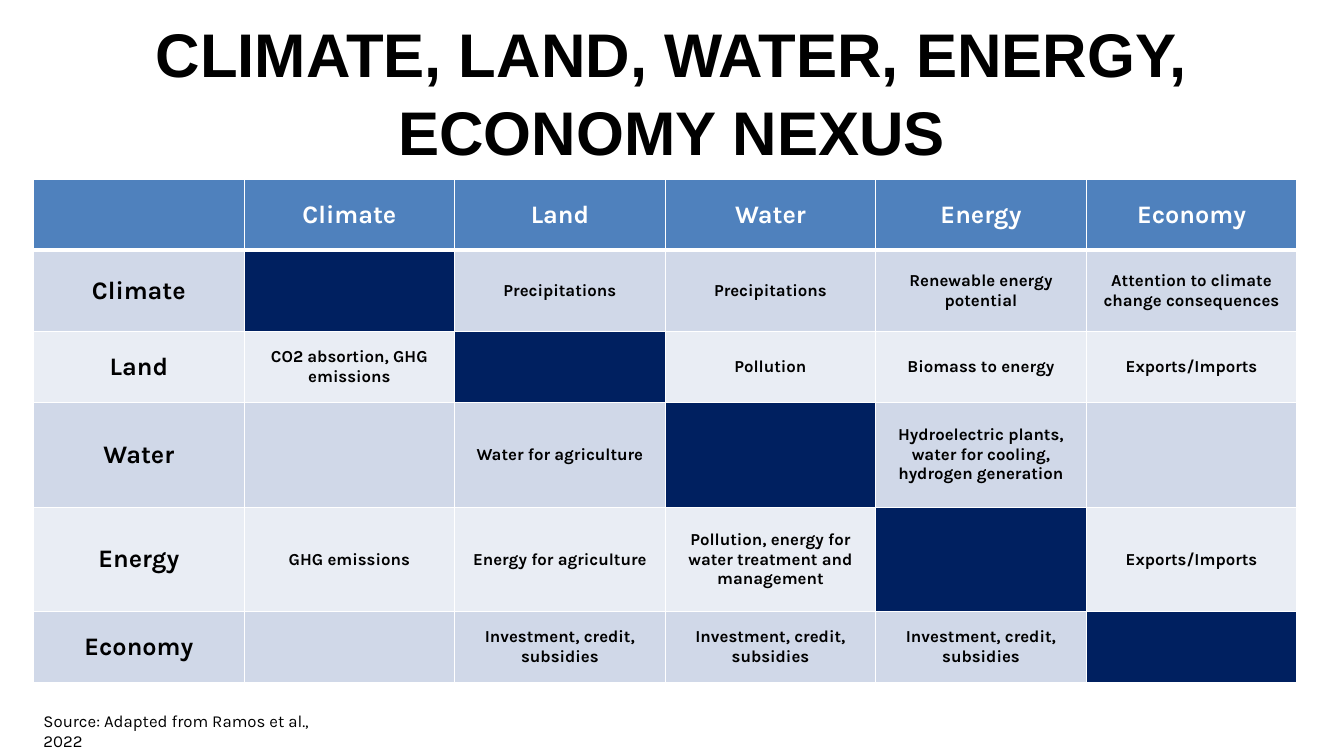
from lxml.etree import SubElement
from pptx import Presentation
from pptx.dml.color import RGBColor
from pptx.enum.text import MSO_ANCHOR, PP_ALIGN
from pptx.oxml.ns import qn
from pptx.util import Inches, Pt

WIDE, HIGH = Inches(13.33), Inches(7.5)
BLACK = RGBColor(0x00, 0x00, 0x00)
WHITE = RGBColor(0xFF, 0xFF, 0xFF)
BLUE = RGBColor(0x4F, 0x81, 0xBD)
NAVY = RGBColor(0x00, 0x20, 0x60)
BANDS = RGBColor(0xE9, 0xED, 0xF4), RGBColor(0xD0, 0xD8, 0xE8)

TOPICS = ["Climate", "Land", "Water", "Energy", "Economy"]
CREDIT = "Investment, credit, subsidies"
LINKS = [
    ["", "Precipitations", "Precipitations", "Renewable energy potential",
     "Attention to climate change consequences"],
    ["CO2 absortion, GHG emissions", "", "Pollution", "Biomass to energy",
     "Exports/Imports"],
    ["", "Water for agriculture", "",
     "Hydroelectric plants, water for cooling, hydrogen generation", ""],
    ["GHG emissions", "Energy for agriculture",
     "Pollution, energy for water treatment and management", "",
     "Exports/Imports"],
    ["", CREDIT, CREDIT, CREDIT, ""],
]
ROWS = [0.7, 0.81, 0.7, 1.04, 1.04, 0.7]  # row heights in inches


def write(frame, text, size=12, font="Karla", color=BLACK, bold=False,
          align=PP_ALIGN.LEFT, space=None):
    """Put one formatted paragraph into a text frame."""
    frame.word_wrap = True
    para = frame.paragraphs[0]
    para.alignment = align
    para.line_spacing = space
    run = para.add_run()
    run.text = text
    run.font.size = Pt(size)
    run.font.name = font
    run.font.bold = bold
    run.font.color.rgb = color


def add_text(slide, text, x, y, w, h, **style):
    """Add a text box placed by shares of the slide's size."""
    box = slide.shapes.add_textbox(
        int(WIDE * x), int(HIGH * y), int(WIDE * w), int(HIGH * h))
    write(box.text_frame, text, **style)


def edge(cell, **sides):
    """Draw white cell borders; schema order puts them before the fill."""
    props = cell._tc.get_or_add_tcPr()
    for spot, (side, width) in enumerate(sides.items()):
        line = SubElement(props, qn(f"a:ln{side}"), w=str(Pt(width)))
        fill = SubElement(line, qn("a:solidFill"))
        SubElement(fill, qn("a:srgbClr"), val=str(WHITE))
        props.insert(spot, line)


def add_cell(cell, text, row, col):
    """Style a cell by its place: header, diagonal or banded body."""
    head = row == 0
    if head:
        shade = BLUE
    elif row == col:
        shade = NAVY
    else:
        shade = BANDS[row % 2]
    cell.fill.solid()
    cell.fill.fore_color.rgb = shade
    edge(cell, L=1, R=1, T=3 if row == 1 else 1, B=3 if head else 1)
    cell.vertical_anchor = MSO_ANCHOR.MIDDLE
    if text:
        write(cell.text_frame, text, size=18 if head or col == 0 else 12,
              color=WHITE if head else BLACK, bold=True,
              align=PP_ALIGN.CENTER)


def add_grid(slide, x, y, w):
    """Add the nexus table with equal columns."""
    data = [["", *TOPICS]]
    data += [[name, *links] for name, links in zip(TOPICS, LINKS)]
    count = len(data[0])
    table = slide.shapes.add_table(
        len(data), count, int(WIDE * x), int(HIGH * y),
        int(WIDE * w), Inches(sum(ROWS))).table
    for col in table.columns:
        col.width = int(WIDE * w / count)
    for row, texts in enumerate(data):
        table.rows[row].height = Inches(ROWS[row])
        for col, text in enumerate(texts):
            add_cell(table.cell(row, col), text, row, col)


def main():
    deck = Presentation()
    deck.slide_width, deck.slide_height = WIDE, HIGH
    slide = deck.slides.add_slide(deck.slide_layouts[6])

    # Title
    add_text(slide, "CLIMATE, LAND, WATER, ENERGY, ECONOMY NEXUS",
             0, 0.01, 1, 0.2, size=44, font="Arial", bold=True,
             align=PP_ALIGN.CENTER, space=1.05)

    # Nexus table
    add_grid(slide, 0.025, 0.2375, 0.94)

    # Source note
    add_text(slide, "Source: Adapted from Ramos et al., 2022",
             0.025, 0.933, 0.24, 0.04)

    deck.save("out.pptx")


if __name__ == "__main__":
    main()
